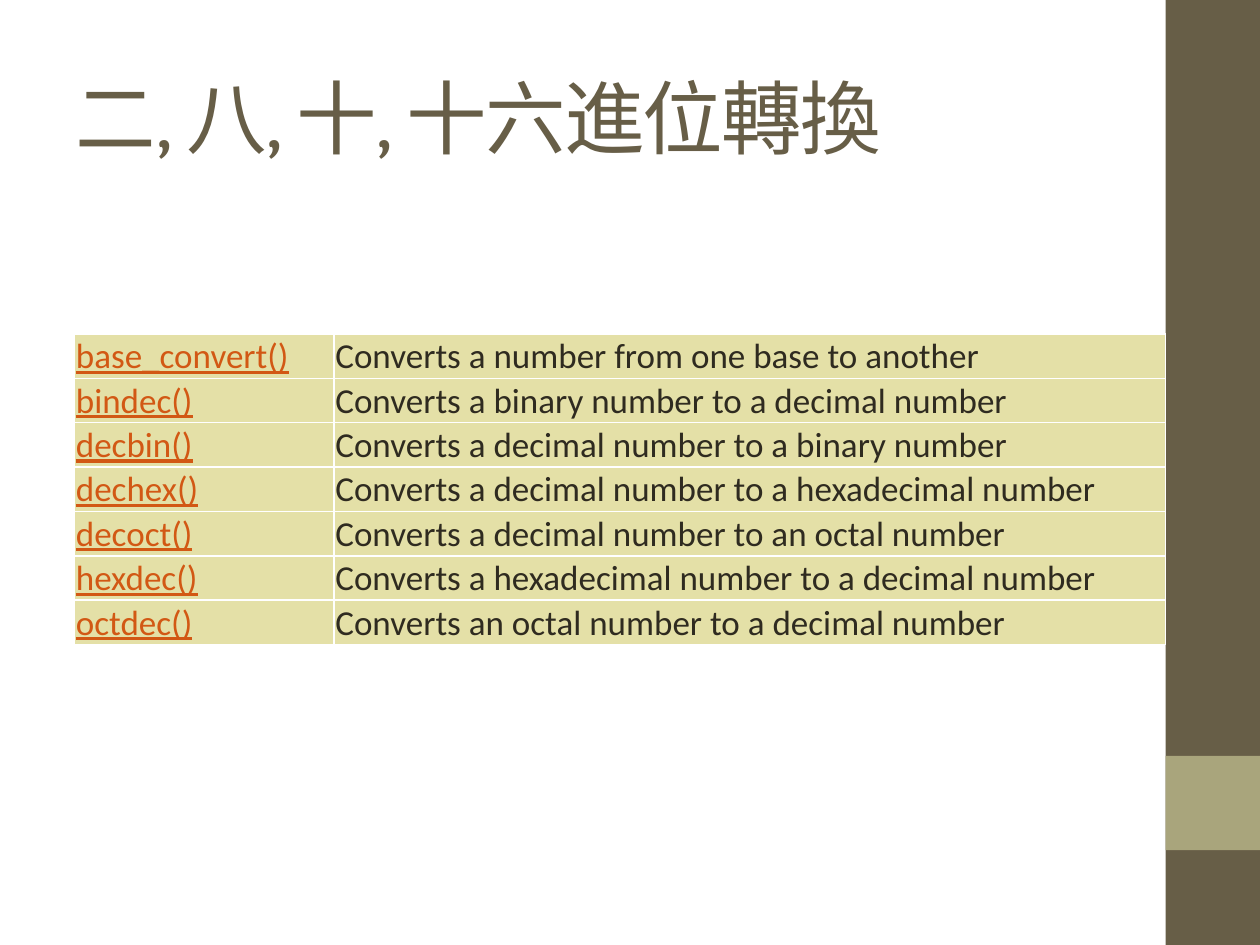
from lxml import etree
from pptx import Presentation
from pptx.dml.color import RGBColor
from pptx.enum import shapes, text
from pptx.oxml import ns
from pptx.util import Cm, Pt

BROWN = RGBColor(0x67, 0x5E, 0x47)
OLIVE = RGBColor(0xA9, 0xA5, 0x7C)
SAND = RGBColor(0xE4, 0xE0, 0xA7)
RUST = RGBColor(0xD2, 0x58, 0x14)
INK = RGBColor(0x2F, 0x2B, 0x20)
WHITE = RGBColor(0xFF, 0xFF, 0xFF)

ROWS = [
    ("base_convert()", "Converts a number from one base to another"),
    ("bindec()", "Converts a binary number to a decimal number"),
    ("decbin()", "Converts a decimal number to a binary number"),
    ("dechex()", "Converts a decimal number to a hexadecimal number"),
    ("decoct()", "Converts a decimal number to an octal number"),
    ("hexdec()", "Converts a hexadecimal number to a decimal number"),
    ("octdec()", "Converts an octal number to a decimal number"),
]
WIDTHS = [Cm(5.23), Cm(16.76)]
STYLES = [{"color": RUST, "underline": True}, {"color": INK, "underline": False}]


def assign(item, values):
    for name, value in values.items():
        setattr(item, name, value)


def style(font, color, **values):
    assign(font, values)
    font.color.rgb = color


def add_band(slide, top, height, color):
    band = slide.shapes.add_shape(
        shapes.MSO_SHAPE.RECTANGLE, Cm(23.5), top, Cm(1.9), height)
    band.shadow.inherit = False
    band.fill.solid()
    band.fill.fore_color.rgb = color
    band.line.fill.background()


def set_title(slide, words):
    title = slide.shapes.title
    assign(title, {"left": Cm(1.27), "top": Cm(0.76),
                   "width": Cm(21.16), "height": Cm(3.18)})
    frame = title.text_frame
    assign(frame, {"text": words, "word_wrap": True,
                   "vertical_anchor": text.MSO_ANCHOR.MIDDLE})
    line = frame.paragraphs[0]
    line.alignment = text.PP_ALIGN.LEFT
    font = line.runs[0].font
    style(font, BROWN, name="Cambria", size=Pt(46))
    line.runs[0]._r.get_or_add_rPr().set("spc", "-100")


def add_edges(cell):
    props = cell._tc.get_or_add_tcPr()
    for side in ("lnL", "lnR", "lnT", "lnB"):
        edge = etree.SubElement(props, ns.qn(f"a:{side}"), w=str(Pt(1)))
        fill = etree.SubElement(edge, ns.qn("a:solidFill"))
        etree.SubElement(fill, ns.qn("a:srgbClr"), val=str(WHITE))


def fill_cell(cell, words, look):
    assign(cell, {"text": words, "margin_left": Cm(0.03), "margin_right": Cm(0.03),
                  "margin_top": Cm(0.03), "margin_bottom": 0})
    add_edges(cell)
    cell.fill.solid()
    cell.fill.fore_color.rgb = SAND
    font = cell.text_frame.paragraphs[0].runs[0].font
    style(font, name="Calibri", size=Pt(20), bold=False, **look)


def add_grid(slide):
    high = Cm(0.87)
    grid = slide.shapes.add_table(
        len(ROWS), len(WIDTHS), Cm(1.5), Cm(6.73),
        sum(WIDTHS), high * len(ROWS)).table
    assign(grid, {"first_row": False, "horz_banding": False})
    for col, width in zip(grid.columns, WIDTHS):
        col.width = width
    for row, words in zip(grid.rows, ROWS):
        row.height = high
        for cell, word, look in zip(row.cells, words, STYLES):
            fill_cell(cell, word, look)


def main():
    deck = Presentation()
    assign(deck, {"slide_width": Cm(25.4), "slide_height": Cm(19.05)})
    slide = deck.slides.add_slide(deck.slide_layouts[5])
    add_band(slide, 0, deck.slide_height, BROWN)
    add_band(slide, Cm(15.24), Cm(1.9), OLIVE)
    set_title(slide, "二, 八, 十, 十六進位轉換")
    add_grid(slide)
    deck.save("out.pptx")


if __name__ == "__main__":
    main()
